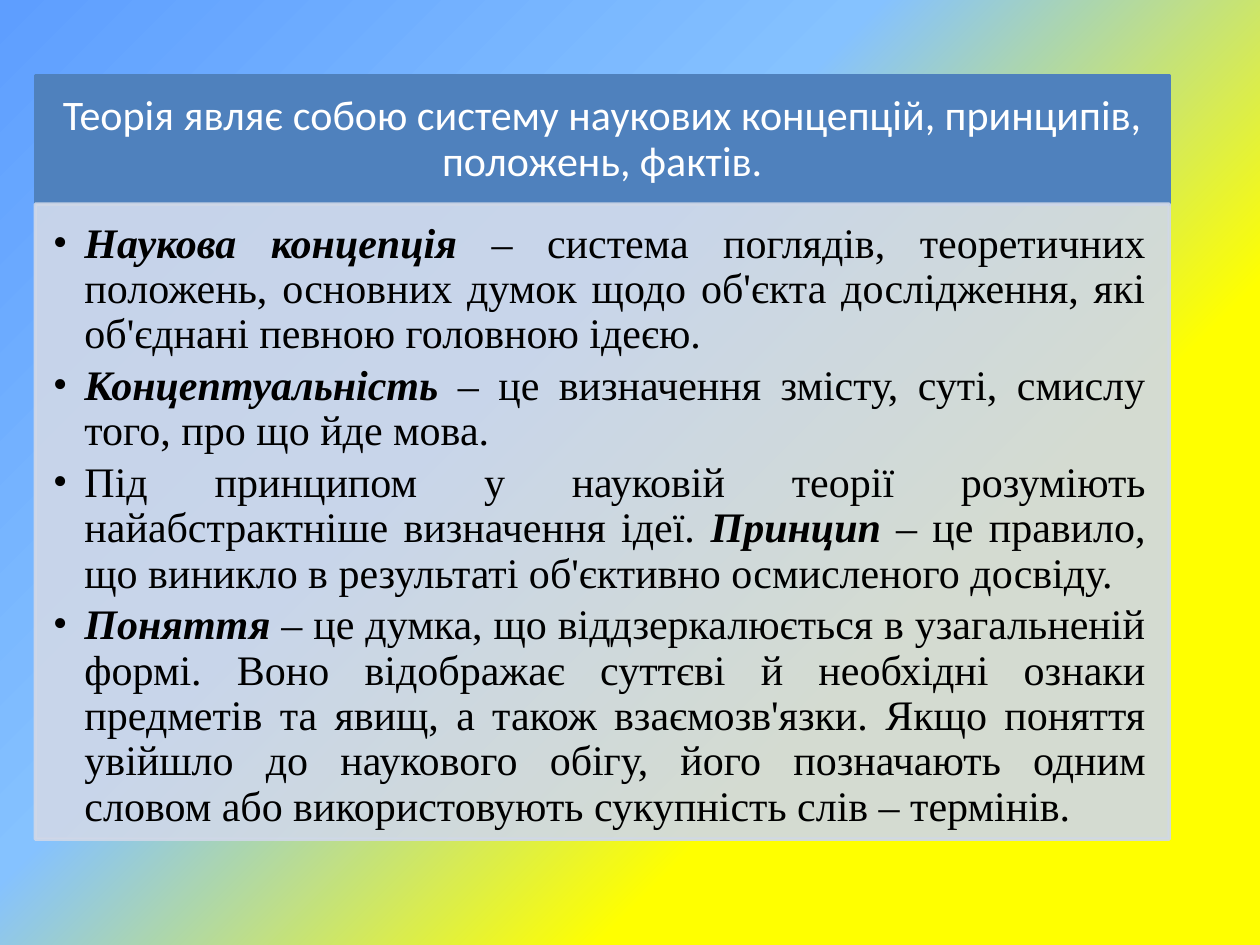
import lxml.etree
import pptx
import pptx.dml.color
import pptx.enum.text
import pptx.oxml.ns
import pptx.util

COLOURS = {
    "sky": "5E9EFF",
    "light_sky": "85C2FF",
    "yellow": "FFFF00",
    "header": "4F81BD",
    "panel": "D0D8E8",
    "white": "FFFFFF",
    "black": "000000",
}
BACKGROUND_STOPS = [(0, "sky"), (40, "light_sky"), (70, "yellow"), (100, "yellow")]
LEFT, WIDTH = 20.16, 648
HEADING = "Теорія являє собою систему наукових концепцій, принципів, положень, фактів."
DEFINITIONS = [
    ("", "Наукова концепція", " – система поглядів, теоретичних положень, основних думок щодо об'єкта дослідження, які об'єднані певною головною ідеєю."),
    ("", "Концептуальність", " – це визначення змісту, суті, смислу того, про що йде мова."),
    ("Під принципом у науковій теорії розуміють найабстрактніше визначення ідеї. ", "Принцип", " – це правило, що виникло в результаті об'єктивно осмисленого досвіду."),
    ("", "Поняття", " – це думка, що віддзеркалюється в узагальненій формі. Воно відображає суттєві й необхідні ознаки предметів та явищ, а також взаємозв'язки. Якщо поняття увійшло до наукового обігу, його позначають одним словом або використовують сукупність слів – термінів."),
]


def rgb(name):
    return pptx.dml.color.RGBColor.from_string(COLOURS[name])


def add_child(parent, tag, **attributes):
    return lxml.etree.SubElement(parent, pptx.oxml.ns.qn(tag), attributes)


def paint_background(page):
    fill = page.background.fill
    fill.gradient()
    fill.gradient_angle = 315
    stops = page.element.find(".//" + pptx.oxml.ns.qn("a:gsLst"))
    for stop in list(stops):
        stops.remove(stop)
    for percent, name in BACKGROUND_STOPS:
        stop = add_child(stops, "a:gs", pos=str(percent * 1000))
        add_child(stop, "a:srgbClr", val=COLOURS[name])


def format_box(box, top, height, colour, insets, anchor):
    box.left, box.top, box.width, box.height = (
        pptx.util.Pt(length) for length in (LEFT, top, WIDTH, height)
    )
    box.fill.solid()
    box.fill.fore_color.rgb = rgb(colour)
    box.line.color.rgb = rgb(colour)
    box.line.width = pptx.util.Pt(2)
    frame = box.text_frame
    frame.word_wrap = True
    frame.auto_size = pptx.enum.text.MSO_AUTO_SIZE.NONE
    frame.vertical_anchor = anchor
    frame.margin_left, frame.margin_top, frame.margin_right, frame.margin_bottom = (
        pptx.util.Pt(inset) for inset in insets
    )


def set_opacity(box, percent):
    for colour in box.element.spPr.iter(pptx.oxml.ns.qn("a:srgbClr")):
        add_child(colour, "a:alpha", val=str(percent * 1000))


def format_para(para, alignment, space_after):
    para.alignment = alignment
    para.line_spacing = 0.9
    para.space_before = pptx.util.Pt(0)
    para.space_after = pptx.util.Pt(space_after)


def format_span(span, font, colour, emphasis=False):
    span.font.name = font
    span.font.size = pptx.util.Pt(24)
    span.font.color.rgb = rgb(colour)
    span.font.bold = emphasis
    span.font.italic = emphasis


def add_bullet(para):
    properties = para._p.get_or_add_pPr()
    indent = pptx.util.Pt(18)
    properties.set("marL", str(indent))
    properties.set("indent", str(-indent))
    add_child(properties, "a:buFont", typeface="Times New Roman")
    add_child(properties, "a:buChar", char="•")


def fill_heading(box):
    format_box(box, 43.2, 73.44, "header", (13.44, 7.68, 13.44, 7.68),
               pptx.enum.text.MSO_ANCHOR.MIDDLE)
    box.text_frame.text = HEADING
    para = box.text_frame.paragraphs[0]
    format_para(para, pptx.enum.text.PP_ALIGN.CENTER, 8.4)
    format_span(para.runs[0], "Calibri", "white")


def fill_definitions(box):
    format_box(box, 116.64, 362.88, "panel", (10.08, 10.08, 13.44, 15.12),
               pptx.enum.text.MSO_ANCHOR.TOP)
    set_opacity(box, 90)
    frame = box.text_frame
    for index, (lead, term, meaning) in enumerate(DEFINITIONS):
        para = frame.add_paragraph() if index else frame.paragraphs[0]
        para.level = 1
        format_para(para, pptx.enum.text.PP_ALIGN.JUSTIFY, 3.6)
        add_bullet(para)
        for text in filter(None, (lead, term, meaning)):
            span = para.add_run()
            span.text = text
            format_span(span, "Times New Roman", "black", text == term)


def main():
    deck = pptx.Presentation()
    deck.slide_width = pptx.util.Pt(720)
    deck.slide_height = pptx.util.Pt(540)
    page = deck.slides.add_slide(deck.slide_layouts[1])
    paint_background(page)
    fill_heading(page.shapes.title)
    fill_definitions(page.placeholders[1])
    deck.save("out.pptx")


if __name__ == "__main__":
    main()
